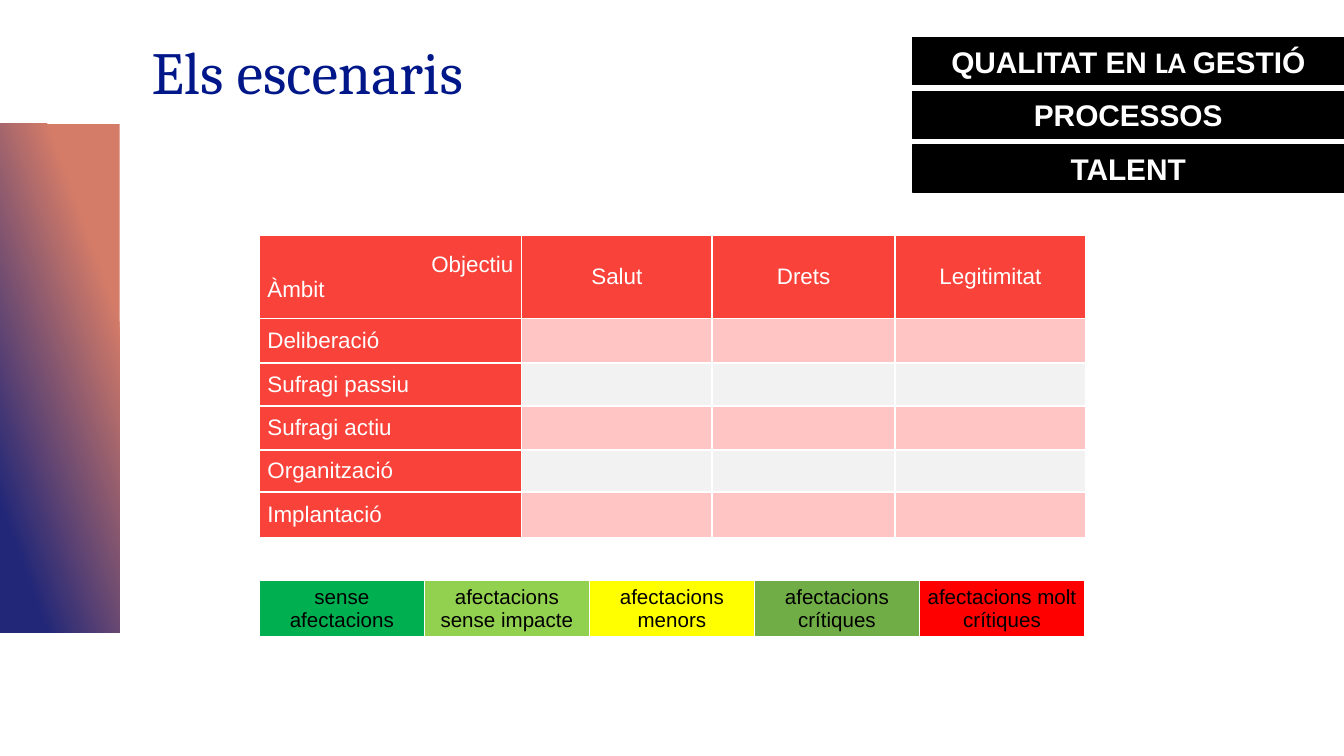
from lxml import etree
from pptx import Presentation
from pptx import util as u
from pptx.dml.color import RGBColor
from pptx.enum import shapes, text
from pptx.oxml import ns

WHITE = RGBColor(0xFF, 0xFF, 0xFF)
BLACK = RGBColor(0, 0, 0)
NAVY = RGBColor(0x00, 0x17, 0x89)
CORAL = RGBColor(0xD4, 0x7C, 0x68)
INDIGO = RGBColor(0x22, 0x27, 0x78)
RED = RGBColor(0xF9, 0x42, 0x3A)
PINK = RGBColor(0xFF, 0xC5, 0xC5)
GREY = RGBColor(0xF2, 0xF2, 0xF2)

LEFT, CENTER = text.PP_ALIGN.LEFT, text.PP_ALIGN.CENTER
RIGHT, JUSTIFY = text.PP_ALIGN.RIGHT, text.PP_ALIGN.JUSTIFY

LABELS = [
    [("QUALITAT EN ", "Arial"), ("LA ", "Calibri"), ("GESTIÓ", "Arial")],
    [("PROCESSOS", "Arial")],
    [("TALENT", "Arial")],
]
GOALS = ["Salut", "Drets", "Legitimitat"]
SCOPES = ["Deliberació", "Sufragi passiu", "Sufragi actiu", "Organització", "Implantació"]
LEGEND = [
    ("sense afectacions", RGBColor(0x00, 0xB0, 0x50)),
    ("afectacions sense impacte", RGBColor(0x92, 0xD0, 0x50)),
    ("afectacions menors", RGBColor(0xFF, 0xFF, 0x00)),
    ("afectacions crítiques", RGBColor(0x70, 0xAD, 0x47)),
    ("afectacions molt crítiques", RGBColor(0xFF, 0x00, 0x00)),
]


def write(p, content, size=12, color=WHITE, font="Arial", bold=False, align=LEFT):
    """Append a formatted run to a paragraph."""
    p.alignment = align
    r = p.add_run()
    r.text = content
    r.font.size = u.Pt(size)
    r.font.name = font
    r.font.bold = bold
    r.font.color.rgb = color


def format_cell(cell, fill):
    """Give a cell its white borders, fill, margins and anchor."""
    tc_pr = cell._tc.get_or_add_tcPr()
    for side in "LRTB":
        ln = etree.SubElement(tc_pr, ns.qn(f"a:ln{side}"), w=str(u.Pt(1)))
        solid = etree.SubElement(ln, ns.qn("a:solidFill"))
        etree.SubElement(solid, ns.qn("a:srgbClr"), val=str(WHITE))
    cell.fill.solid()
    cell.fill.fore_color.rgb = fill
    cell.margin_left = cell.margin_right = u.Inches(0.06)
    cell.margin_top = cell.margin_bottom = 0
    cell.vertical_anchor = text.MSO_ANCHOR.MIDDLE


def add_grid(s, x, y, widths, heights):
    """Add an unstyled table with the given column widths and row heights."""
    frame = s.shapes.add_table(len(heights), len(widths), u.Inches(x), u.Inches(y),
                               u.Inches(sum(widths)), u.Inches(sum(heights)))
    table = frame.table
    table.first_row = table.horz_banding = False
    for col, width in zip(table.columns, widths):
        col.width = u.Inches(width)
    for row, height in zip(table.rows, heights):
        row.height = u.Inches(height)
    return table


def add_side_band(s, x, y, w, h):
    """Draw the gradient band as a flipped rectangle turned a quarter."""
    sp = s.shapes.add_shape(shapes.MSO_SHAPE.RECTANGLE, u.Inches(x + (w - h) / 2),
                            u.Inches(y + (h - w) / 2), u.Inches(h), u.Inches(w))
    sp.rotation = 90
    sp._element.spPr.find(ns.qn("a:xfrm")).set("flipV", "1")
    sp.shadow.inherit = False
    sp.line.fill.background()
    sp.fill.gradient()
    sp.fill.gradient_angle = 70
    for stop, position, color in zip(sp.fill.gradient_stops, (0.23, 0.85), (CORAL, INDIGO)):
        stop.position = position
        stop.color.rgb = color


def add_title(s, x, y, w, h):
    """Place the slide title."""
    tf = s.shapes.add_textbox(u.Inches(x), u.Inches(y), u.Inches(w), u.Inches(h)).text_frame
    tf.word_wrap = True
    tf.vertical_anchor = text.MSO_ANCHOR.BOTTOM
    p = tf.paragraphs[0]
    p.line_spacing = 0.9
    write(p, "Els escenaris", size=32, color=NAVY, font="Cambria")


def add_labels(s, x, y, w, h, step):
    """Stack the black labels at an even step."""
    for i, runs in enumerate(LABELS):
        sp = s.shapes.add_shape(shapes.MSO_SHAPE.RECTANGLE, u.Inches(x),
                                u.Inches(y + i * step), u.Inches(w), u.Inches(h))
        sp.shadow.inherit = False
        sp.fill.solid()
        sp.fill.fore_color.rgb = BLACK
        sp.line.color.rgb = BLACK
        sp.line.width = 0
        tf = sp.text_frame
        tf.vertical_anchor = text.MSO_ANCHOR.MIDDLE
        for content, font in runs:
            write(tf.paragraphs[0], content, size=16, font=font, bold=True, align=CENTER)


def add_scenarios(s, x, y):
    """Build the table of scopes against goals."""
    table = add_grid(s, x, y, [1.95, 1.42, 1.36, 1.42], [0.62, 0.33, 0.32, 0.33, 0.31, 0.34])
    corner = table.cell(0, 0)
    format_cell(corner, RED)
    write(corner.text_frame.paragraphs[0], "Objectiu", align=RIGHT)
    write(corner.text_frame.add_paragraph(), "Àmbit", align=JUSTIFY)
    for col, goal in enumerate(GOALS, 1):
        cell = table.cell(0, col)
        format_cell(cell, RED)
        write(cell.text_frame.paragraphs[0], goal, align=CENTER)
    for row, scope in enumerate(SCOPES, 1):
        cell = table.cell(row, 0)
        format_cell(cell, RED)
        write(cell.text_frame.paragraphs[0], scope, align=JUSTIFY)
        for col in range(1, len(GOALS) + 1):
            cell = table.cell(row, col)
            format_cell(cell, PINK if row % 2 else GREY)
            p = cell.text_frame.paragraphs[0]
            etree.SubElement(p._p, ns.qn("a:endParaRPr"), sz="1200")


def add_legend(s, x, y, w, h):
    """Build the one-row colour legend."""
    table = add_grid(s, x, y, [w / len(LEGEND)] * len(LEGEND), [h])
    for col, (label, color) in enumerate(LEGEND):
        cell = table.cell(0, col)
        format_cell(cell, color)
        write(cell.text_frame.paragraphs[0], label, size=11, color=BLACK, align=CENTER)


def main():
    """Build and save the slide."""
    prs = Presentation()
    prs.slide_width, prs.slide_height = u.Inches(10), u.Inches(10 * 9 / 16)
    s = prs.slides.add_slide(prs.slide_layouts[6])
    add_side_band(s, 0, 0.92, 0.89, 3.79)
    add_title(s, 1.03, 0.26, 8.32, 0.59)
    add_scenarios(s, 1.93, 1.75)
    add_legend(s, 1.93, 4.32, 6.14, 0.42)
    add_labels(s, 6.79, 0.28, 3.21, 0.35, 0.4)
    prs.save("out.pptx")


if __name__ == "__main__":
    main()
